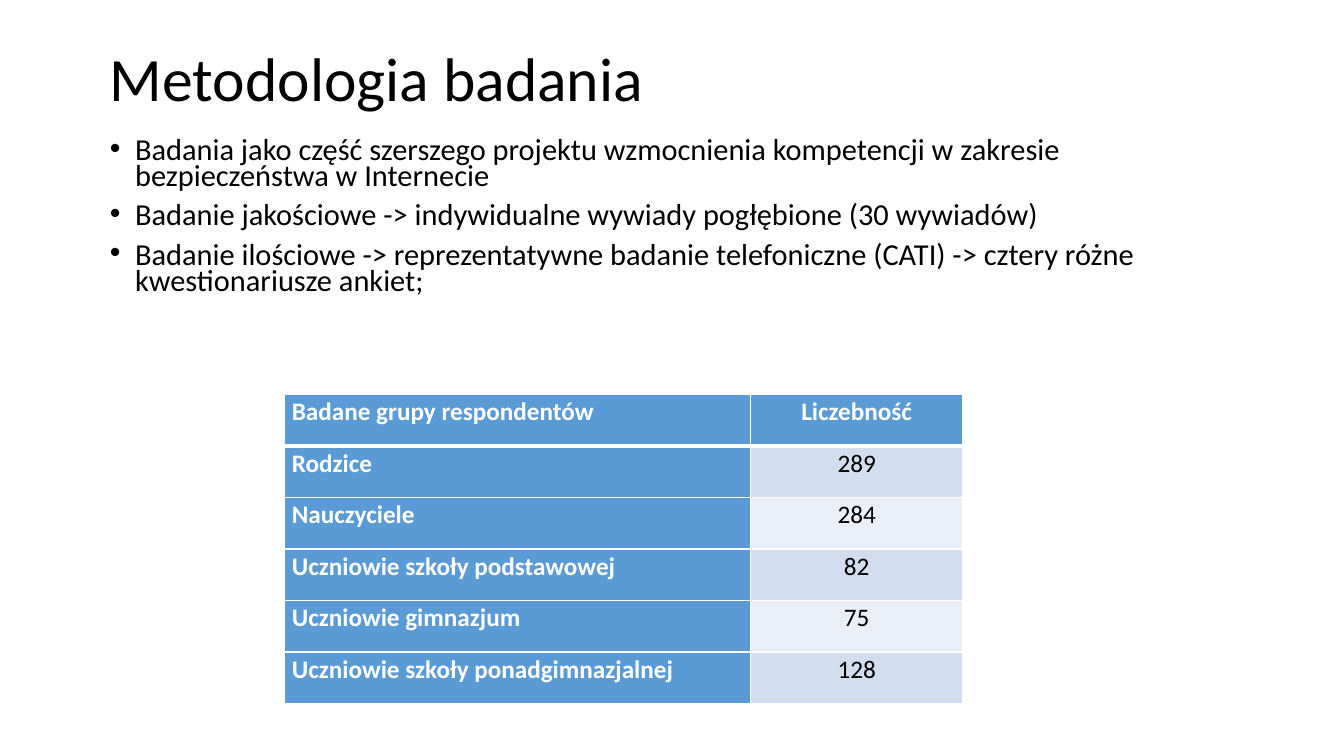
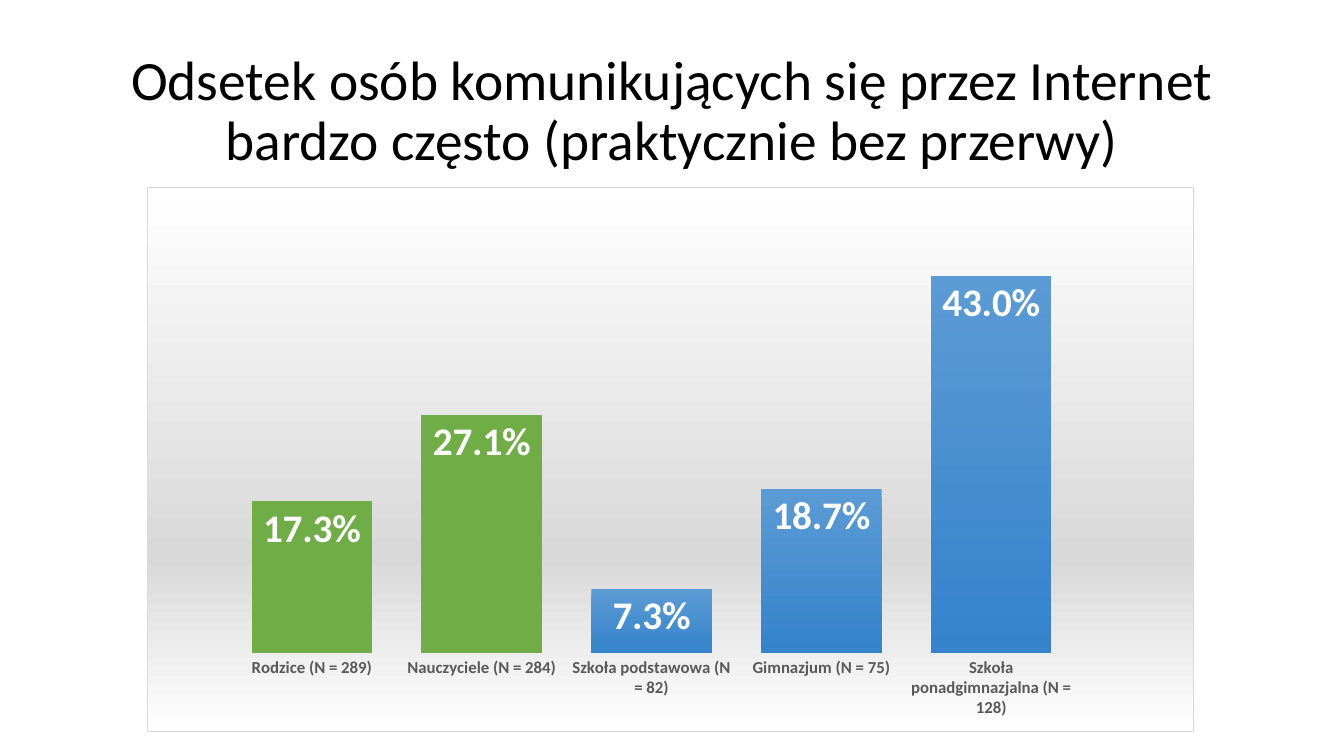
import pptx
import pptx.chart.data
import pptx.dml.color
import pptx.enum.chart
import pptx.enum.text
import pptx.oxml
import pptx.oxml.ns
import pptx.util

EMU_PER_PX = 9525
ALIGN = pptx.enum.text.PP_ALIGN


def px(length):
    return pptx.util.Emu(length * EMU_PER_PX)


def rgb(value):
    return pptx.dml.color.RGBColor.from_string(value)


def parse(xml):
    namespaces = pptx.oxml.ns.nsdecls("a", "c")
    return pptx.oxml.parse_xml(xml.replace(">", f" {namespaces}>", 1))


def set_font(font, size, color, bold=False):
    font.name = Deck.FONT
    font.size = pptx.util.Pt(size)
    font.bold = bold
    font.color.rgb = rgb(color)


def add_text(frame, text, size=18, color="000000", bold=False, align=ALIGN.LEFT,
             line_spacing=0.9, space_before=0, bullet=None, indent=0):
    """Write each line of the text as one formatted paragraph."""
    for index, line in enumerate(text.split("\n")):
        paragraph = frame.add_paragraph() if index else frame.paragraphs[0]
        paragraph.alignment = align
        paragraph.line_spacing = line_spacing
        paragraph.space_before = pptx.util.Pt(space_before)
        run = paragraph.add_run()
        run.text = line
        set_font(run.font, size, color, bold)
        if bullet:
            properties = paragraph._p.get_or_add_pPr()
            properties.set("marL", str(px(indent)))
            properties.set("indent", str(-px(indent)))
            properties.append(parse('<a:buFont typeface="Arial"></a:buFont>'))
            properties.append(parse(f'<a:buChar char="{bullet}"></a:buChar>'))


class Deck:
    FONT = "Calibri"
    BLACK, WHITE = "000000", "FFFFFF"
    BLUE, DEEP_BLUE, GREEN = "5B9BD5", "3483CB", "70AD47"
    BANDS = ("D2DEEF", "EAEFF7")
    GREY, DARK_GREY = "D9D9D9", "595959"
    TITLE_SIZE = (1104, 139)

    def __init__(self):
        self.presentation = pptx.Presentation()
        self.presentation.slide_width = px(1280)
        self.presentation.slide_height = px(720)
        self.slide = None

    def add_slide(self, layout_name):
        layout = self.presentation.slide_layouts.get_by_name(layout_name)
        self.slide = self.presentation.slides.add_slide(layout)

    def place(self, shape, left, top, width, height, anchor):
        shape.left, shape.top = px(left), px(top)
        shape.width, shape.height = px(width), px(height)
        frame = shape.text_frame
        frame.word_wrap = True
        frame.auto_size = pptx.enum.text.MSO_AUTO_SIZE.NONE
        frame.vertical_anchor = anchor
        return frame

    def title(self, text, left, top, **text_format):
        frame = self.place(self.slide.shapes.title, left, top, *self.TITLE_SIZE,
                           pptx.enum.text.MSO_ANCHOR.MIDDLE)
        add_text(frame, text, **text_format)

    def bullets(self, lines, left, top, width, height):
        frame = self.place(self.slide.placeholders[1], left, top, width, height,
                           pptx.enum.text.MSO_ANCHOR.TOP)
        add_text(frame, "\n".join(lines), size=21.7, line_spacing=0.7,
                 space_before=10, bullet="•", indent=24)

    def cell_borders(self, cell, **widths):
        properties = cell._tc.get_or_add_tcPr()
        for side in "LRTB":
            width = pptx.util.Pt(widths.get(side, 1))
            properties.append(parse(
                f'<a:ln{side} w="{width}"><a:solidFill><a:srgbClr val="{self.WHITE}"/>'
                f'</a:solidFill></a:ln{side}>'))

    def table(self, rows, left, top, column_widths, row_height):
        table = self.slide.shapes.add_table(
            len(rows), len(column_widths), px(left), px(top),
            px(sum(column_widths)), px(row_height * len(rows))).table
        table.horz_banding = False
        for column, width in zip(table.columns, column_widths):
            column.width = px(width)
        for row_index, row in enumerate(rows):
            table.rows[row_index].height = px(row_height)
            for column_index, text in enumerate(row):
                cell = table.cell(row_index, column_index)
                cell.margin_left = cell.margin_right = px(7)
                cell.margin_top = cell.margin_bottom = 0
                heading = row_index == 0 or column_index == 0
                self.cell_borders(cell, **{0: {"B": 3}, 1: {"T": 3}}.get(row_index, {}))
                cell.fill.solid()
                cell.fill.fore_color.rgb = rgb(
                    self.BLUE if heading else self.BANDS[(row_index - 1) % 2])
                add_text(cell.text_frame, text, bold=heading, line_spacing=1.07,
                         color=self.WHITE if heading else self.BLACK,
                         align=ALIGN.CENTER if column_index else ALIGN.LEFT)

    def column_chart(self, values, highlighted, left, top, width, height):
        data = pptx.chart.data.CategoryChartData(number_format="0.0%")
        data.categories = list(values)
        data.add_series("Series 1", list(values.values()))
        chart = self.slide.shapes.add_chart(
            pptx.enum.chart.XL_CHART_TYPE.COLUMN_CLUSTERED,
            px(left), px(top), px(width), px(height), data).chart
        chart.has_legend = chart.has_title = False
        set_font(chart.font, 10, self.BLACK)

        # Axes
        chart.value_axis.minimum_scale = 0
        chart.value_axis.maximum_scale = 0.5
        chart.value_axis.has_major_gridlines = False
        chart.value_axis.visible = False
        category_axis = chart.category_axis
        category_axis.major_tick_mark = pptx.enum.chart.XL_TICK_MARK.NONE
        category_axis.format.line.fill.background()
        set_font(category_axis.tick_labels.font, 12, self.DARK_GREY, bold=True)

        # Columns and their labels
        plot = chart.plots[0]
        plot.gap_width = 41
        plot.vary_by_categories = False
        series = plot.series[0]
        series.invert_if_negative = False
        series_fill = series.format.fill
        series_fill.gradient()
        series_fill.gradient_angle = 270
        for stop, color in zip(series_fill.gradient_stops, (self.BLUE, self.DEEP_BLUE)):
            stop.color.rgb = rgb(color)
        for index in highlighted:
            point_fill = series.points[index].format.fill
            point_fill.solid()
            point_fill.fore_color.rgb = rgb(self.GREEN)
        labels = series.data_labels
        labels.show_value = True
        labels.number_format = "0.0%"
        labels.number_format_is_linked = False
        labels.position = pptx.enum.chart.XL_LABEL_POSITION.INSIDE_END
        set_font(labels.font, 28, self.WHITE, bold=True)

        self.chart_background(chart)
        self.plot_layout(chart, x=0.076, y=0.049, w=0.812, h=0.808)

    def chart_background(self, chart):
        """Fill the chart from top to bottom and give it a thin border."""
        stops = "".join(
            f'<a:gs pos="{percent * 1000}"><a:srgbClr val="{color}"/></a:gs>'
            for percent, color in ((0, self.WHITE), (68, self.GREY), (100, self.WHITE)))
        properties = parse(
            f'<c:spPr><a:gradFill><a:gsLst>{stops}</a:gsLst>'
            '<a:lin ang="5400000" scaled="0"/></a:gradFill>'
            f'<a:ln w="{px(1)}"><a:solidFill><a:srgbClr val="{self.GREY}"/>'
            '</a:solidFill></a:ln></c:spPr>')
        chart.element.find(pptx.oxml.ns.qn("c:chart")).addnext(properties)

    def plot_layout(self, chart, **fractions):
        plot_area = chart.element.find(".//" + pptx.oxml.ns.qn("c:plotArea"))
        for layout in plot_area.findall(pptx.oxml.ns.qn("c:layout")):
            plot_area.remove(layout)
        sizes = "".join(f'<c:{key} val="{value}"/>' for key, value in fractions.items())
        plot_area.insert(0, parse(
            '<c:layout><c:manualLayout><c:layoutTarget val="inner"/>'
            '<c:xMode val="edge"/><c:yMode val="edge"/>'
            f'{sizes}</c:manualLayout></c:layout>'))


def main():
    deck = Deck()

    # Methodology
    deck.add_slide("Title and Content")
    deck.title("Metodologia badania", 95, 8, size=44)
    deck.bullets([
        "Badania jako część szerszego projektu wzmocnienia kompetencji w zakresie "
        "bezpieczeństwa w Internecie",
        "Badanie jakościowe -> indywidualne wywiady pogłębione (30 wywiadów)",
        "Badanie ilościowe -> reprezentatywne badanie telefoniczne (CATI) -> cztery różne "
        "kwestionariusze ankiet;",
    ], 95, 129, 1104, 170)
    deck.table([
        ("Badane grupy respondentów", "Liczebność"),
        ("Rodzice", "289"),
        ("Nauczyciele", "284"),
        ("Uczniowie szkoły podstawowej", "82"),
        ("Uczniowie gimnazjum", "75"),
        ("Uczniowie szkoły ponadgimnazjalnej", "128"),
    ], 271, 376, (444, 202), 49)

    # Share of people communicating online
    deck.add_slide("Title Only")
    deck.column_chart({
        "Rodzice (N = 289)": 0.173,
        "Nauczyciele (N = 284)": 0.271,
        "Szkoła podstawowa (N = 82)": 0.073,
        "Gimnazjum (N = 75)": 0.187,
        "Szkoła ponadgimnazjalna (N = 128)": 0.43,
    }, (0, 1), 140, 178, 997, 519)
    deck.title("Odsetek osób komunikujących się przez Internet bardzo często "
               "(praktycznie bez przerwy)", 88, 38, size=39.6, align=ALIGN.CENTER)

    deck.presentation.save("out.pptx")


if __name__ == "__main__":
    main()
